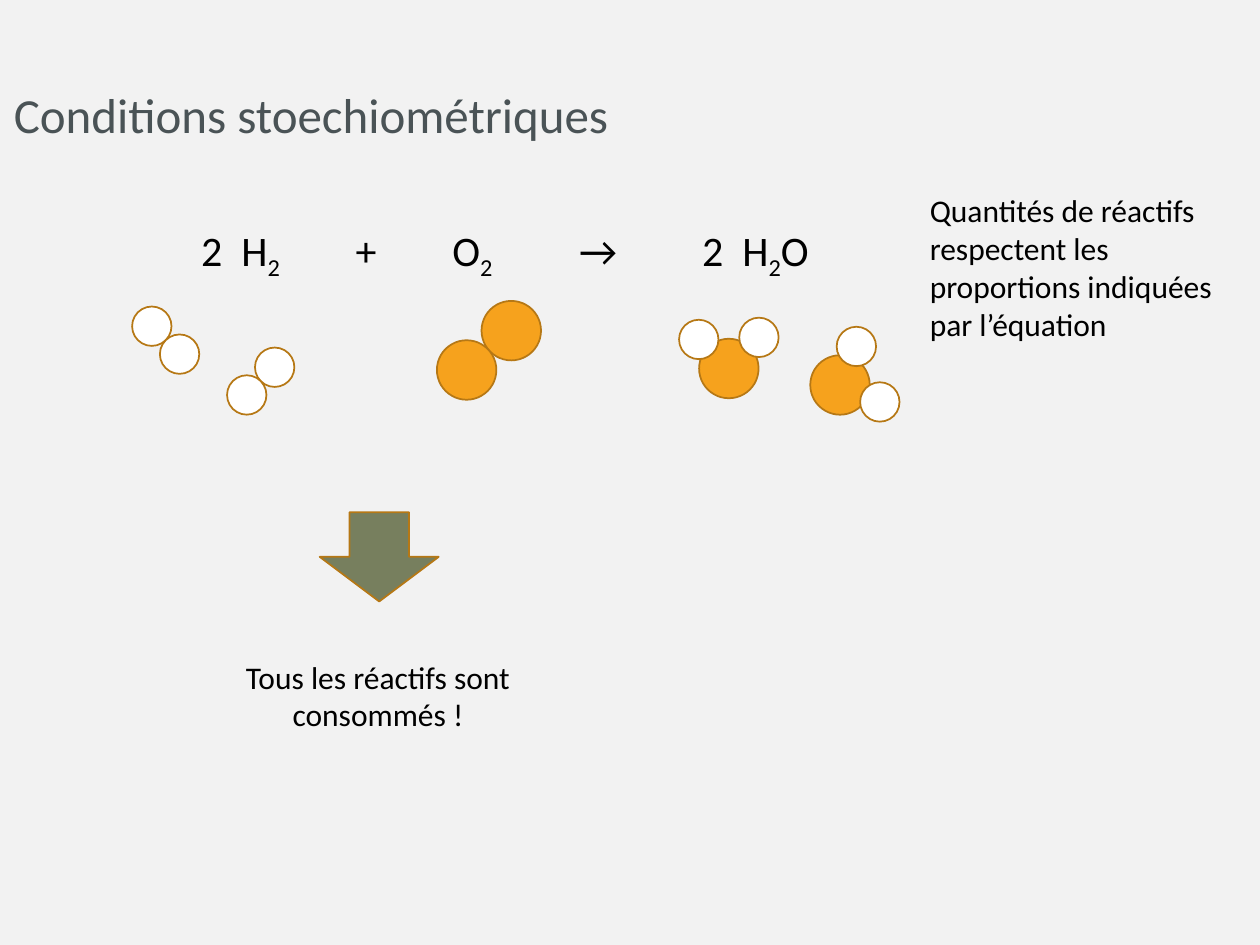
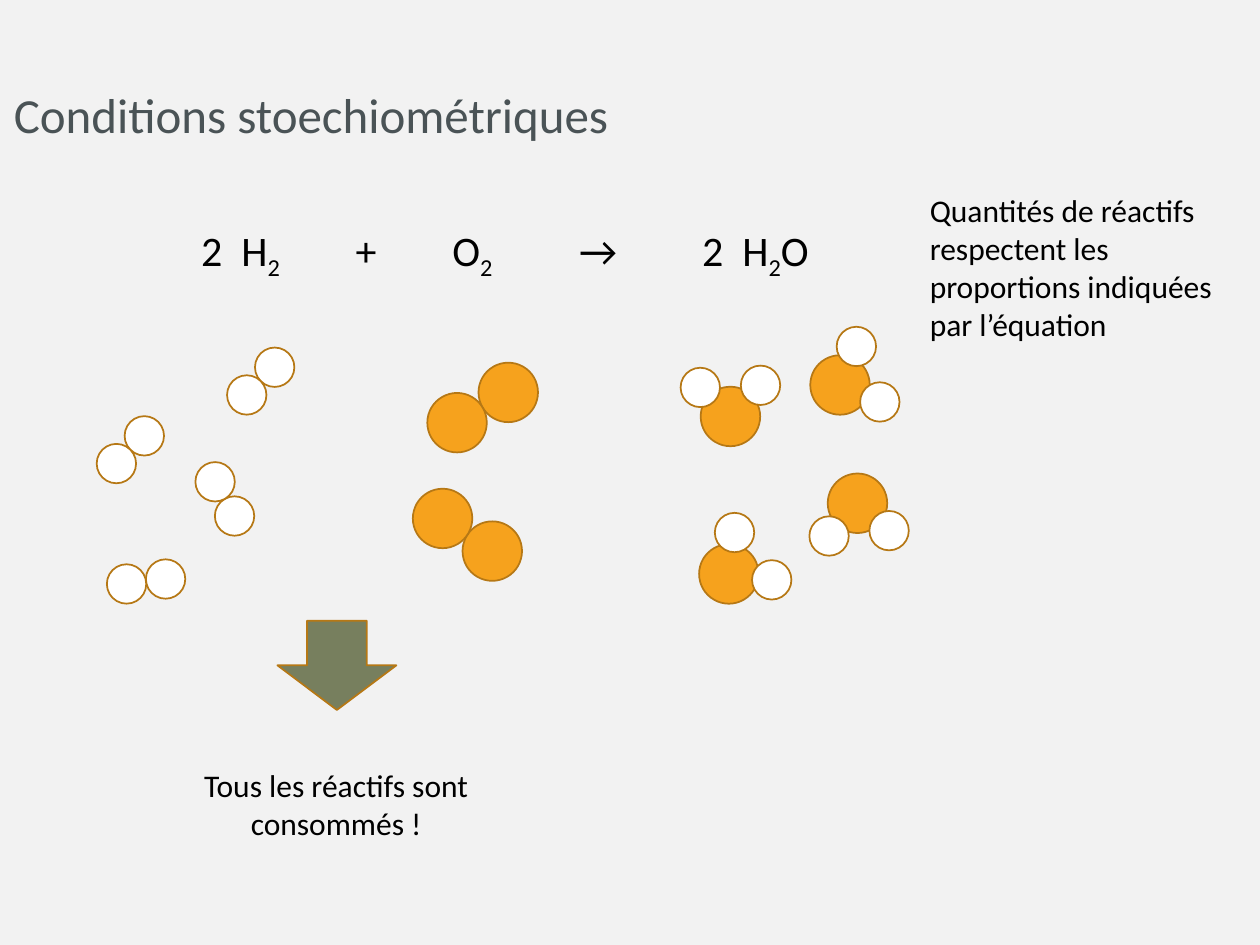
from dataclasses import dataclass
from math import cos, radians, sin

from lxml import etree
from pptx import Presentation
from pptx.dml.color import RGBColor
from pptx.enum.shapes import MSO_SHAPE
from pptx.enum.text import MSO_ANCHOR, PP_ALIGN
from pptx.oxml.ns import qn
from pptx.util import Pt

ELLIPSE = MSO_SHAPE.OVAL
DOWN_ARROW = MSO_SHAPE.DOWN_ARROW
MIDDLE = MSO_ANCHOR.MIDDLE
LEFT = PP_ALIGN.LEFT
CENTER = PP_ALIGN.CENTER

COLORS = {
    "background": "F2F2F2",
    "title": "4A5356",
    "text": "000000",
    "hydrogen": "FFFFFF",
    "oxygen": "F6A21D",
    "outline": "B67815",
    "arrow": "777F5E",
}
FONT = "Calibri"
TITLE_ONLY = 5
DIAMETERS = {"hydrogen": 22.5, "oxygen": 34}
WATER_HYDROGENS = ((-17.2, -16.6), (17.2, -17.8))

TITLE = "Conditions stoechiométriques"
CONDITION = "Quantités de réactifs respectent les proportions indiquées par l’équation"
CONCLUSION = "Tous les réactifs sont consommés !"
EQUATION = (
    ("\t2\tH", False), ("2", True), ("\t+\tO", False), ("2", True),
    ("\t→\t2\tH", False), ("2", True), ("O", False),
)
EQUATION_STOPS = (93.5, 116.5, 181.7, 237, 309.4, 379.7, 402.7)


@dataclass(frozen=True)
class Box:
    left: float
    top: float
    width: float
    height: float

    def lengths(self) -> tuple:
        return Pt(self.left), Pt(self.top), Pt(self.width), Pt(self.height)


@dataclass(frozen=True)
class Molecule:
    formula: str
    x: float
    y: float
    angle: float


@dataclass(frozen=True)
class Reaction:
    molecules: tuple
    arrow: Box
    conclusion: Box


TITLE_BOX = Box(0.7, 36, 648, 58.3)
EQUATION_BOX = Box(14.4, 124.6, 550, 36)
CONDITION_BOX = Box(524.2, 105.8, 181.4, 94.3)

SHARED_MOLECULES = (
    Molecule("H2", 149, 217.8, 45.2),
    Molecule("H2O", 480, 220, 69.1),
)
REACTIONS = (
    Reaction(
        SHARED_MOLECULES + (
            Molecule("H2", 94.7, 194.4, 315.2),
            Molecule("O2", 279.4, 200.2, 48.6),
            Molecule("H2O", 416.5, 210.6, 0),
        ),
        Box(182.7, 292.7, 68, 51),
        Box(128.9, 372.2, 174.2, 51),
    ),
    Reaction(
        SHARED_MOLECULES + (
            Molecule("H2", 74.5, 257, 45.2),
            Molecule("H2", 83.5, 332.3, 82.7),
            Molecule("H2", 128.5, 285.1, 150.4),
            Molecule("O2", 275.8, 232.9, 59.4),
            Molecule("O2", 267.1, 305.6, 123.3),
            Molecule("H2O", 417.4, 238, 0),
            Molecule("H2O", 490, 287.6, 176.9),
            Molecule("H2O", 416.5, 328, 53.8),
        ),
        Box(158.5, 354.7, 68, 51),
        Box(105, 434.2, 174.2, 51),
    ),
)


def color(name: str) -> RGBColor:
    return RGBColor.from_string(COLORS[name])


def format_paragraph(paragraph, size: float, color_name: str, alignment) -> None:
    paragraph.alignment = alignment
    paragraph.font.name = FONT
    paragraph.font.size = Pt(size)
    paragraph.font.color.rgb = color(color_name)


def place_title(slide) -> None:
    title = slide.shapes.title
    title.left, title.top, title.width, title.height = TITLE_BOX.lengths()
    title.text_frame.text = TITLE
    title.text_frame.vertical_anchor = MIDDLE
    format_paragraph(title.text_frame.paragraphs[0], 28, "title", LEFT)


def add_text(slide, box: Box, text: str, size: float, alignment):
    text_frame = slide.shapes.add_textbox(*box.lengths()).text_frame
    text_frame.word_wrap = True
    paragraph = text_frame.paragraphs[0]
    paragraph.text = text
    format_paragraph(paragraph, size, "text", alignment)
    return paragraph


def add_equation(slide) -> None:
    paragraph = add_text(slide, EQUATION_BOX, "", 24, LEFT)
    tab_list = etree.Element(qn("a:tabLst"))
    for stop in EQUATION_STOPS:
        etree.SubElement(tab_list, qn("a:tab"), pos=str(Pt(stop)), algn="l")
    paragraph._p.get_or_add_pPr().insert(0, tab_list)
    for text, is_subscript in EQUATION:
        run = paragraph.add_run()
        run.text = text
        if is_subscript:
            run._r.get_or_add_rPr().set("baseline", "-25000")


def add_outlined_shape(slide, kind, box: Box, fill: str) -> None:
    shape = slide.shapes.add_shape(kind, *box.lengths())
    shape.shadow.inherit = False
    shape.fill.solid()
    shape.fill.fore_color.rgb = color(fill)
    shape.line.color.rgb = color("outline")
    shape.line.width = Pt(1)


def add_atom(slide, element: str, x: float, y: float) -> None:
    size = DIAMETERS[element]
    box = Box(x - size / 2, y - size / 2, size, size)
    add_outlined_shape(slide, ELLIPSE, box, element)


def molecule_atoms(formula: str) -> tuple:
    if formula == "H2O":
        hydrogens = tuple(("hydrogen", x, y) for x, y in WATER_HYDROGENS)
        return (("oxygen", 0, 0),) + hydrogens
    element = "hydrogen" if formula == "H2" else "oxygen"
    radius = DIAMETERS[element] / 2
    return (element, 0, -radius), (element, 0, radius)


def add_molecule(slide, molecule: Molecule) -> None:
    cosine, sine = cos(radians(molecule.angle)), sin(radians(molecule.angle))
    for element, x, y in molecule_atoms(molecule.formula):
        add_atom(
            slide, element,
            molecule.x + x * cosine - y * sine,
            molecule.y + x * sine + y * cosine,
        )


def add_reaction_slide(presentation, reaction: Reaction) -> None:
    slide = presentation.slides.add_slide(presentation.slide_layouts[TITLE_ONLY])
    place_title(slide)
    add_equation(slide)
    for molecule in reaction.molecules:
        add_molecule(slide, molecule)
    add_outlined_shape(slide, DOWN_ARROW, reaction.arrow, "arrow")
    add_text(slide, reaction.conclusion, CONCLUSION, 18, CENTER)
    add_text(slide, CONDITION_BOX, CONDITION, 18, LEFT)


def main() -> None:
    presentation = Presentation()
    presentation.slide_width, presentation.slide_height = Pt(720), Pt(540)
    background = presentation.slide_master.background.fill
    background.solid()
    background.fore_color.rgb = color("background")
    for reaction in REACTIONS:
        add_reaction_slide(presentation, reaction)
    presentation.save("out.pptx")


if __name__ == "__main__":
    main()
